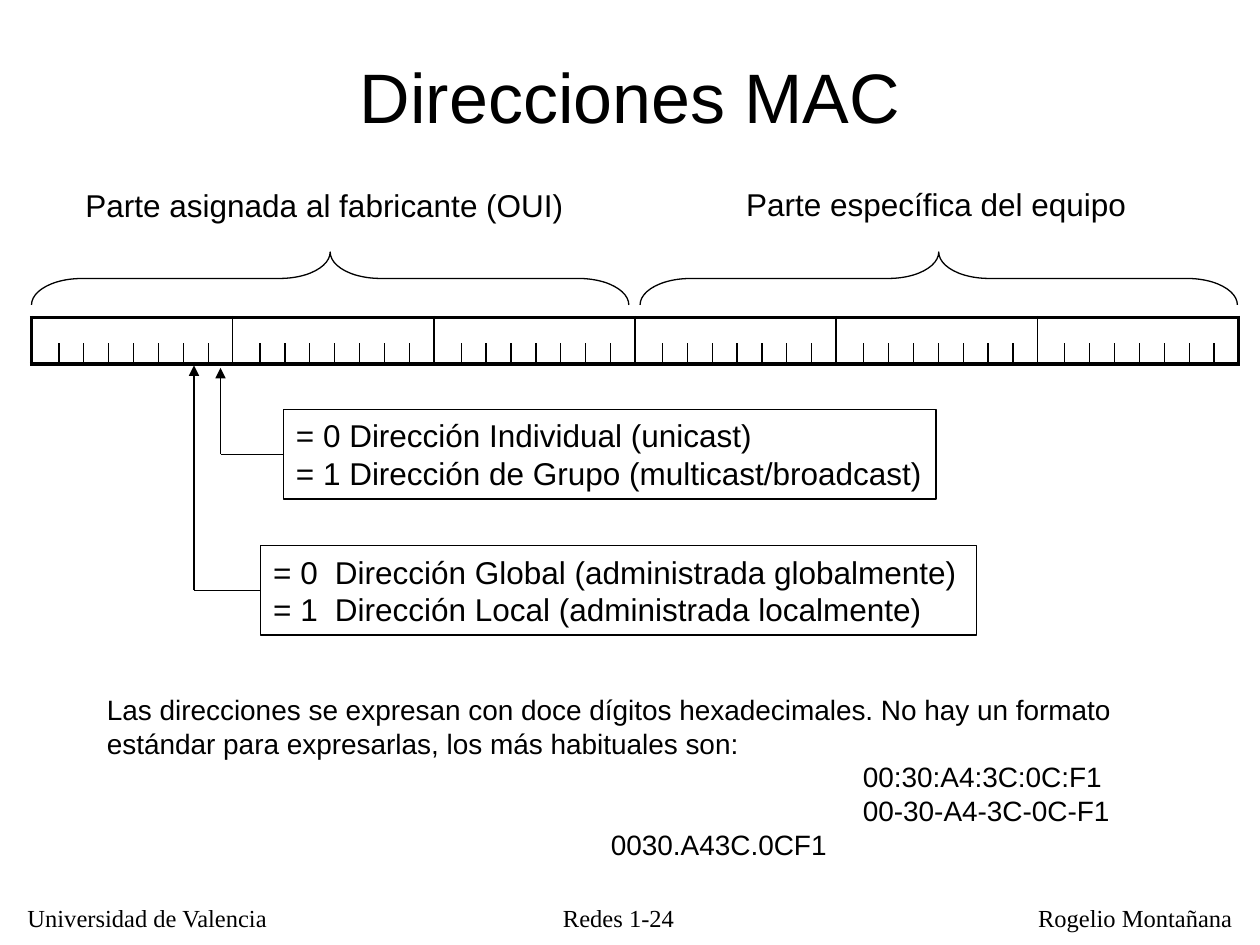
from dataclasses import dataclass

from lxml.etree import SubElement
from pptx import Presentation
from pptx.dml.color import RGBColor
from pptx.enum.shapes import MSO_CONNECTOR, MSO_SHAPE
from pptx.enum.text import MSO_ANCHOR, PP_ALIGN
from pptx.oxml.ns import qn
from pptx.util import Inches, Pt


@dataclass(frozen=True)
class Theme:
    ink: RGBColor = RGBColor(0, 0, 0)
    sans: str = "Arial"
    serif: str = "Times New Roman"
    title: float = 40
    label: float = 18
    body: float = 16
    footer: float = 14
    thin: float = 0.75
    inner: float = 1
    thick: float = 2.25


THEME = Theme()
OCTETS = 6
BITS = 8


def style(p, size, font=THEME.sans, align=PP_ALIGN.LEFT):
    p.alignment = align
    p.font.size = Pt(size)
    p.font.name = font
    p.font.color.rgb = THEME.ink


def write(tf, lines, size, font=THEME.sans, align=PP_ALIGN.LEFT):
    for i, line in enumerate(lines):
        p = tf.paragraphs[0] if i == 0 else tf.add_paragraph()
        p.text = line
        style(p, size, font, align)


def add_text(s, box, lines, size, font=THEME.sans, align=PP_ALIGN.LEFT, wrap=False):
    tf = s.shapes.add_textbox(*map(Inches, box)).text_frame
    tf.word_wrap = wrap
    write(tf, lines, size, font, align)
    return tf


def add_line(shapes, x1, y1, x2, y2, arrow=False):
    ends = map(Inches, (x1, y1, x2, y2))
    c = shapes.add_connector(MSO_CONNECTOR.STRAIGHT, *ends)
    c.line.color.rgb = THEME.ink
    c.line.width = Pt(THEME.thin)
    if arrow:
        SubElement(c.line._get_or_add_ln(), qn("a:tailEnd"), type="triangle")
    SubElement(c._element.spPr, qn("a:effectLst"))
    return c


def outline(sp):
    sp.shadow.inherit = False
    sp.fill.background()
    sp.line.color.rgb = THEME.ink
    sp.line.width = Pt(THEME.thin)


def add_title(s, box, text):
    sp = s.shapes.title
    sp.left, sp.top, sp.width, sp.height = map(Inches, box)
    sp.text_frame.vertical_anchor = MSO_ANCHOR.MIDDLE
    write(sp.text_frame, [text], THEME.title, align=PP_ALIGN.CENTER)


def add_brace(s, box):
    x, y, w, h = box
    left, top = x + (w - h) / 2, y + (h - w) / 2
    sp = s.shapes.add_shape(MSO_SHAPE.LEFT_BRACE, *map(Inches, (left, top, h, w)))
    sp.rotation = 90
    sp.adjustments[0] = 0.95
    outline(sp)


def set_borders(cell, widths):
    tcPr = cell._tc.get_or_add_tcPr()
    for i, (side, width) in enumerate(widths.items()):
        ln = tcPr.makeelement(qn(f"a:{side}"), {"w": str(Pt(width))})
        fill = SubElement(ln, qn("a:solidFill"))
        SubElement(fill, qn("a:srgbClr"), val=str(THEME.ink))
        tcPr.insert(i, ln)


def add_octets(s, box):
    x, y, w, h = box
    table = s.shapes.add_table(1, OCTETS, *map(Inches, box)).table
    table.first_row = table.horz_banding = False
    for i, cell in enumerate(table.rows[0].cells):
        table.columns[i].width = Inches(w / OCTETS)
        cell.fill.background()
        style(cell.text_frame.paragraphs[0], THEME.footer)
        set_borders(cell, {
            "lnL": THEME.thick if i == 0 else THEME.inner,
            "lnR": THEME.thick if i == OCTETS - 1 else THEME.inner,
            "lnT": THEME.thick,
            "lnB": THEME.thick,
        })
        add_bits(s, (x + 0.02 + i * w / OCTETS, y + h - 0.17, 1.58, 0.17))


def add_bits(s, box):
    x, y, w, h = box
    shapes = s.shapes.add_group_shape().shapes
    add_line(shapes, x, y + h, x + w, y + h)
    for bit in range(1, BITS):
        tick = x + bit * w / BITS
        add_line(shapes, tick, y + h, tick, y)


def add_callout(s, box, lines, bit_x, tip_y, tab=None):
    x, y, w, h = box
    sp = s.shapes.add_shape(MSO_SHAPE.RECTANGLE, *map(Inches, box))
    outline(sp)
    sp.text_frame.word_wrap = False
    write(sp.text_frame, lines, THEME.label)
    if tab:
        for p in sp.text_frame.paragraphs:
            tabs = SubElement(p._p.get_or_add_pPr(), qn("a:tabLst"))
            SubElement(tabs, qn("a:tab"), pos=str(Inches(tab)), algn="l")
            p._p.pPr.insert(0, tabs)
    middle = y + h / 2
    add_line(s.shapes, bit_x, middle, bit_x, tip_y, arrow=True)
    add_line(s.shapes, bit_x, middle, x, middle).end_connect(sp, 1)


def add_formats(s, box, intro, formats):
    lines = [intro] + [text for text, indent in formats]
    tf = add_text(s, box, lines, THEME.body, wrap=True)
    for p, (text, indent) in zip(tf.paragraphs[1:], formats):
        p._p.get_or_add_pPr().set("marL", str(Inches(indent)))


def add_footer(s, box):
    x, y, w, h = box
    for left, width, text, align in (
        (x, 2.13, "Universidad de Valencia", PP_ALIGN.LEFT),
        (x + 4.14, 1.3, "Redes 1-24", PP_ALIGN.CENTER),
        (x + w - 1.74, 1.74, "Rogelio Montañana", PP_ALIGN.LEFT),
    ):
        add_text(s, (left, y, width, h), [text], THEME.footer, THEME.serif, align)


def main():
    prs = Presentation()
    prs.slide_width, prs.slide_height = Inches(10), Inches(7.5)
    s = prs.slides.add_slide(prs.slide_layouts[5])
    add_title(s, (0.75, 0.42, 8.5, 0.67), "Direcciones MAC")
    for box, text in (
        ((0.58, 1.43, 3.99, 0.4), "Parte asignada al fabricante (OUI)"),
        ((5.82, 1.42, 3.22, 0.4), "Parte específica del equipo"),
    ):
        add_text(s, box, [text], THEME.label, align=PP_ALIGN.CENTER)
    for left in (0.25, 5.08):
        add_brace(s, (left, 2, 4.74, 0.42))
    add_octets(s, (0.25, 2.52, 9.58, 0.37))
    add_callout(s, (2.25, 3.25, 5.18, 0.71), [
        "= 0 Dirección Individual (unicast)",
        "= 1 Dirección de Grupo (multicast/broadcast)",
    ], 1.75, 2.92)
    add_callout(s, (2.07, 4.33, 5.68, 0.71), [
        "= 0\tDirección Global (administrada globalmente)",
        "= 1\tDirección Local (administrada localmente)",
    ], 1.54, 2.9, tab=0.49)
    add_formats(
        s, (0.75, 5.45, 8.24, 1.44),
        "Las direcciones se expresan con doce dígitos hexadecimales. No hay un formato "
        "estándar para expresarlas, los más habituales son:",
        [("00:30:A4:3C:0C:F1", 6), ("00-30-A4-3C-0C-F1", 6), ("0030.A43C.0CF1", 4)],
    )
    add_footer(s, (0.12, 7.12, 9.76, 0.33))
    prs.save("out.pptx")


if __name__ == "__main__":
    main()
